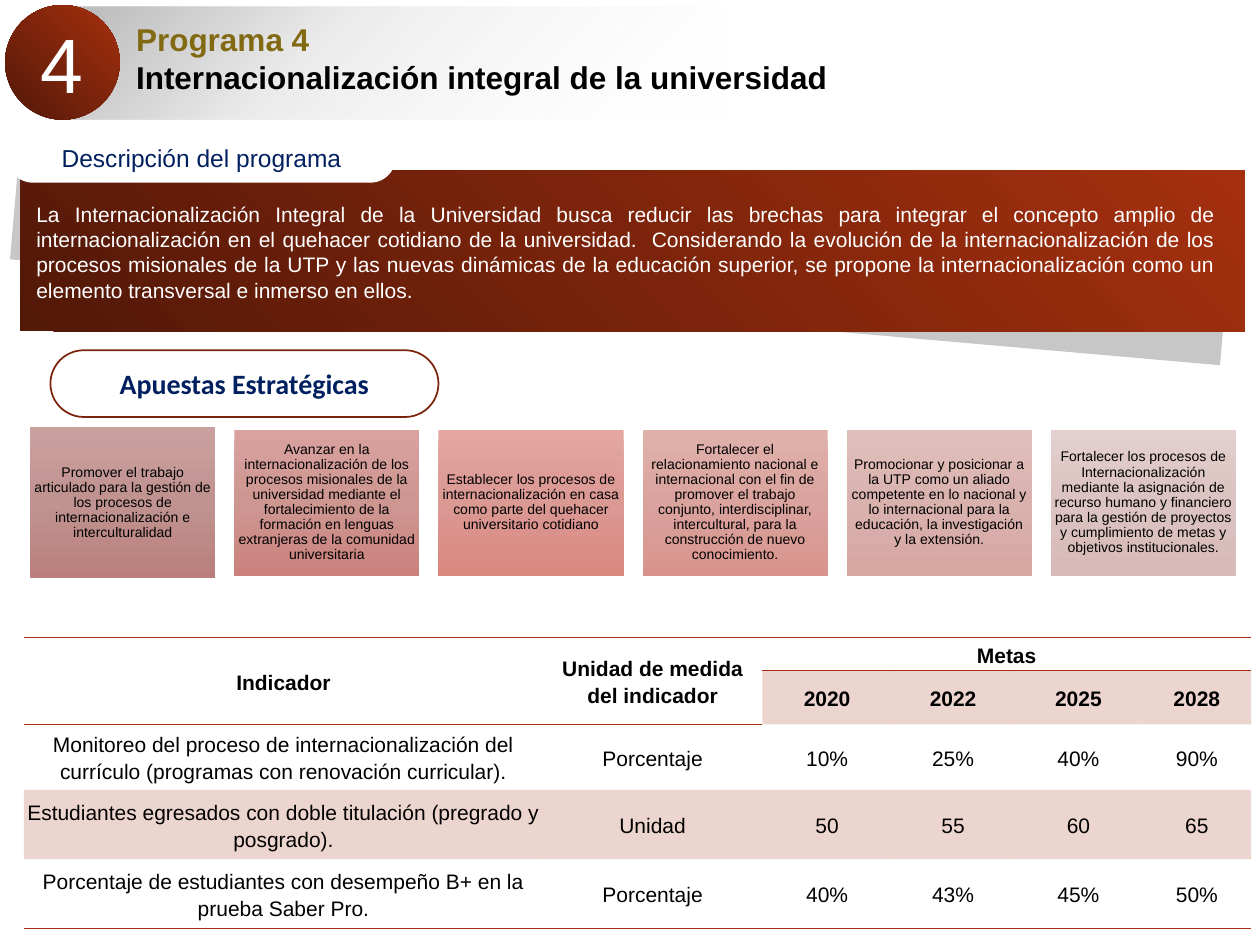
from lxml import etree
from pptx import Presentation
from pptx.dml.color import RGBColor
from pptx.enum.shapes import MSO_SHAPE as Shape
from pptx.enum.text import MSO_ANCHOR as Anchor, MSO_AUTO_SIZE as Fit, PP_ALIGN as Align
from pptx.oxml import parse_xml
from pptx.oxml.ns import nsdecls, qn
from pptx.util import Inches, Pt

WHITE = RGBColor(0xFF, 0xFF, 0xFF)
BLACK = RGBColor(0, 0, 0)
NAVY = RGBColor(0x00, 0x20, 0x60)
GOLD = RGBColor(0x82, 0x6A, 0x12)
RUST = RGBColor(0xA5, 0x30, 0x0F)
BROWN = RGBColor(0x7C, 0x24, 0x0B)
DARK = RGBColor(0x52, 0x18, 0x08)
SLATE = RGBColor(0x32, 0x32, 0x32)
GRAY = RGBColor(0xBF, 0xBF, 0xBF)

RED_FADE = [(0, DARK, 100), (50, BROWN, 100), (100, RUST, 100)]
GRAY_FADE = [(5, GRAY, 100), (37, GRAY, 31), (100, WHITE, 0)]

# Each card: its text, then its top, middle and bottom colours.
CARDS = [
    ("Promover el trabajo articulado para la gestión de los procesos de internacionalización "
     "e interculturalidad", "CAA09E", "C09390", "BA7F7C"),
    ("Avanzar en la internacionalización de los procesos misionales de la universidad mediante "
     "el fortalecimiento de la formación en lenguas extranjeras de la comunidad universitaria",
     "D9A29E", "CE9691", "CB827D"),
    ("Establecer los procesos de internacionalización en casa como parte del quehacer "
     "universitario cotidiano", "E3A6A1", "DB9994", "DA877F"),
    ("Fortalecer el relacionamiento nacional e internacional con el fin de promover el trabajo "
     "conjunto, interdisciplinar, intercultural, para la construcción de nuevo conocimiento.",
     "E0B1AB", "DAA39E", "D8948C"),
    ("Promocionar y posicionar a la UTP como un aliado competente en lo nacional y lo "
     "internacional para la educación, la investigación y la extensión.",
     "E0BFBB", "D9B2AE", "D6A6A1"),
    ("Fortalecer los procesos de Internacionalización mediante la asignación de recurso humano "
     "y financiero para la gestión de proyectos y cumplimiento de metas y objetivos "
     "institucionales.", "E3CFCD", "DBC3C1", "D8BAB8"),
]
ABOUT = (
    "La Internacionalización Integral de la Universidad busca reducir las brechas para integrar "
    "el concepto amplio de internacionalización en el quehacer cotidiano de la universidad.  "
    "Considerando la evolución de la internacionalización de los procesos misionales de la UTP y "
    "las nuevas dinámicas de la educación superior, se propone la internacionalización como un "
    "elemento transversal e inmerso en ellos.")
GOALS = [
    ["Indicador", "Unidad de medida del indicador", "Metas", "", "", ""],
    ["", "", "2020", "2022", "2025", "2028"],
    ["Monitoreo del proceso de internacionalización del currículo (programas con renovación "
     "curricular).", "Porcentaje", "10%", "25%", "40%", "90%"],
    ["Estudiantes egresados con doble titulación (pregrado y posgrado).",
     "Unidad", "50", "55", "60", "65"],
    ["Porcentaje de estudiantes con desempeño B+ en la prueba Saber Pro.",
     "Porcentaje", "40%", "43%", "45%", "50%"],
]
COLS = [4.12, 1.74, 1.03, 0.97, 1.02, 0.86]
ROWS = [0.26, 0.26, 0.52, 0.55, 0.55]
NO_GRID = "{2D5ABB26-0587-4C30-8999-92F81FD0307C}"


def write(frame, text, size=12, color=BLACK, bold=False, font="Arial",
          align=Align.CENTER, anchor=Anchor.MIDDLE, space=None, inset=None):
    """Fill a text frame, one paragraph a line; inset is (side, top) in inches."""
    frame.word_wrap = True
    frame.vertical_anchor = anchor
    if inset:
        frame.margin_left = frame.margin_right = Inches(inset[0])
        frame.margin_top = frame.margin_bottom = Inches(inset[1])
    frame.text = text
    for para in frame.paragraphs:
        para.alignment = align
        if space:
            para.line_spacing = space
        for run in para.runs:
            run.font.name, run.font.size = font, Pt(size)
            run.font.bold, run.font.color.rgb = bold, color


def tint(fill, color, alpha=100):
    fill.solid()
    fill.fore_color.rgb = color
    if alpha < 100:
        node = fill._xPr.find(qn("a:solidFill"))[0]
        etree.SubElement(node, qn("a:alpha"), val=str(alpha * 1000))


def fade(shape, stops, angle):
    """Gradient fill from (position, colour, opacity) stops; angle runs clockwise."""
    marks = "".join(
        f'<a:gs pos="{pos * 1000}"><a:srgbClr val="{color}">'
        f'<a:alpha val="{alpha * 1000}"/></a:srgbClr></a:gs>' for pos, color, alpha in stops)
    grad = parse_xml(f'<a:gradFill {nsdecls("a")} rotWithShape="1"><a:gsLst>{marks}</a:gsLst>'
                     f'<a:lin ang="{angle * 60000}" scaled="0"/></a:gradFill>')
    shape.fill.background()
    old = shape._element.spPr.find(qn("a:noFill"))
    old.getparent().replace(old, grad)


def block(slide, kind, x, y, w, h, fill=None, line=None):
    shape = slide.shapes.add_shape(kind, Inches(x), Inches(y), Inches(w), Inches(h))
    shape.shadow.inherit = False
    if fill is not None:
        tint(shape.fill, fill)
    if line is None:
        shape.line.fill.background()
    else:
        shape.line.color.rgb, shape.line.width = line, Pt(1)
    return shape


def pill(slide, x, y, w, h, text, line=None, **style):
    shape = block(slide, Shape.ROUNDED_RECTANGLE, x, y, w, h, WHITE, line)
    shape.adjustments[0] = 0.5
    write(shape.text_frame, text, color=NAVY, **style)


def header(slide, x, y, size):
    """Number disc on a fading band, with the slide title beside it."""
    band = block(slide, Shape.RECTANGLE, x + 0.47, y + 0.01, 5.25, size - 0.01)
    fade(band, GRAY_FADE, 45)
    disc = block(slide, Shape.OVAL, x, y, size, size)
    fade(disc, RED_FADE, 315)
    write(disc.text_frame, "4", size=44, color=WHITE, inset=(0.08, 0.1))

    title = slide.shapes.title
    title.left, title.top = Inches(x + 0.94), Inches(y + 0.07)
    title.width, title.height = Inches(8.04), Inches(0.71)
    frame = title.text_frame
    write(frame, "Programa 4\nInternacionalización integral de la universidad",
          size=18, bold=True, align=Align.LEFT, anchor=Anchor.TOP)
    frame.auto_size = Fit.NONE
    frame.paragraphs[0].runs[0].font.color.rgb = GOLD
    slide.shapes._spTree.append(title._element)


def banner(slide, x, y, w, h):
    """Programme description over a tilted grey strip."""
    strip = block(slide, Shape.RECTANGLE, x - 0.07, y + 0.46, w - 0.08, 0.67)
    tint(strip.fill, SLATE, 27)
    strip.rotation = 5
    fade(block(slide, Shape.RECTANGLE, x, y, w, h), RED_FADE, 315)
    pill(slide, x - 0.1, y - 0.3, 3.08, 0.4, "Descripción del programa", size=14)
    box = slide.shapes.add_textbox(Inches(x + 0.03), Inches(y + 0.2),
                                   Inches(w - 0.16), Inches(0.91))
    write(box.text_frame, ABOUT, color=WHITE, align=Align.JUSTIFY, anchor=Anchor.TOP)


def cards(slide, x, y, w, h, step):
    for i, (text, *hues) in enumerate(CARDS):
        trim = 0.02 if i else 0
        card = block(slide, Shape.RECTANGLE, x + i * step, y + trim, w, h - 2 * trim)
        fade(card, [(pos, hue, 100) for pos, hue in zip((0, 50, 100), hues)], 90)
        write(card.text_frame, text, size=8, space=0.9, inset=(0.03, 0.03))


def rule(cell, *sides):
    """Draw rust borders on the given sides, T before B."""
    props = cell._tc.get_or_add_tcPr()
    for i, side in enumerate(sides):
        props.insert(i, parse_xml(
            f'<a:ln{side} {nsdecls("a")} w="12700"><a:solidFill><a:srgbClr val="{RUST}"/>'
            f'</a:solidFill></a:ln{side}>'))


def goals(slide, x, y):
    table = slide.shapes.add_table(len(ROWS), len(COLS), Inches(x), Inches(y),
                                   Inches(sum(COLS)), Inches(sum(ROWS))).table
    table.first_row = table.horz_banding = False
    table._tbl.tblPr.find(qn("a:tableStyleId")).text = NO_GRID
    for col, width in zip(table.columns, COLS):
        col.width = Inches(width)
    for row, height in zip(table.rows, ROWS):
        row.height = Inches(height)
    for r, line in enumerate(GOALS):
        for c, text in enumerate(line):
            cell = table.cell(r, c)
            slim = r > 2 or (r == 2 and c == 0)
            write(cell.text_frame, text, bold=r < 2, space=1.15)
            cell.vertical_anchor = Anchor.MIDDLE
            cell.margin_left = cell.margin_right = Inches(0.02 if slim else 0.05)
            cell.margin_top = cell.margin_bottom = 0
            if r == 3 or (r == 1 and c > 1):
                tint(cell.fill, RUST, 20)
            else:
                cell.fill.background()
            if r == 0:
                rule(cell, "T", "B")
            elif r == 4 or (r == 1 and c < 2):
                rule(cell, "B")
    for c in (0, 1):
        table.cell(0, c).merge(table.cell(1, c))
    table.cell(0, 2).merge(table.cell(0, 5))


def main():
    deck = Presentation()
    deck.slide_width, deck.slide_height = Inches(10), Inches(7.5)
    slide = deck.slides.add_slide(deck.slide_layouts[5])
    banner(slide, 0.16, 1.35, 9.72, 1.28)
    header(slide, 0.04, 0.04, 0.91)
    pill(slide, 0.4, 2.78, 3.08, 0.53, "Apuestas Estratégicas", line=BROWN,
         size=16, bold=True, font="Calibri")
    goals(slide, 0.19, 5.06)
    cards(slide, 0.24, 3.39, 1.47, 1.2, 1.62)
    deck.save("out.pptx")


if __name__ == "__main__":
    main()
